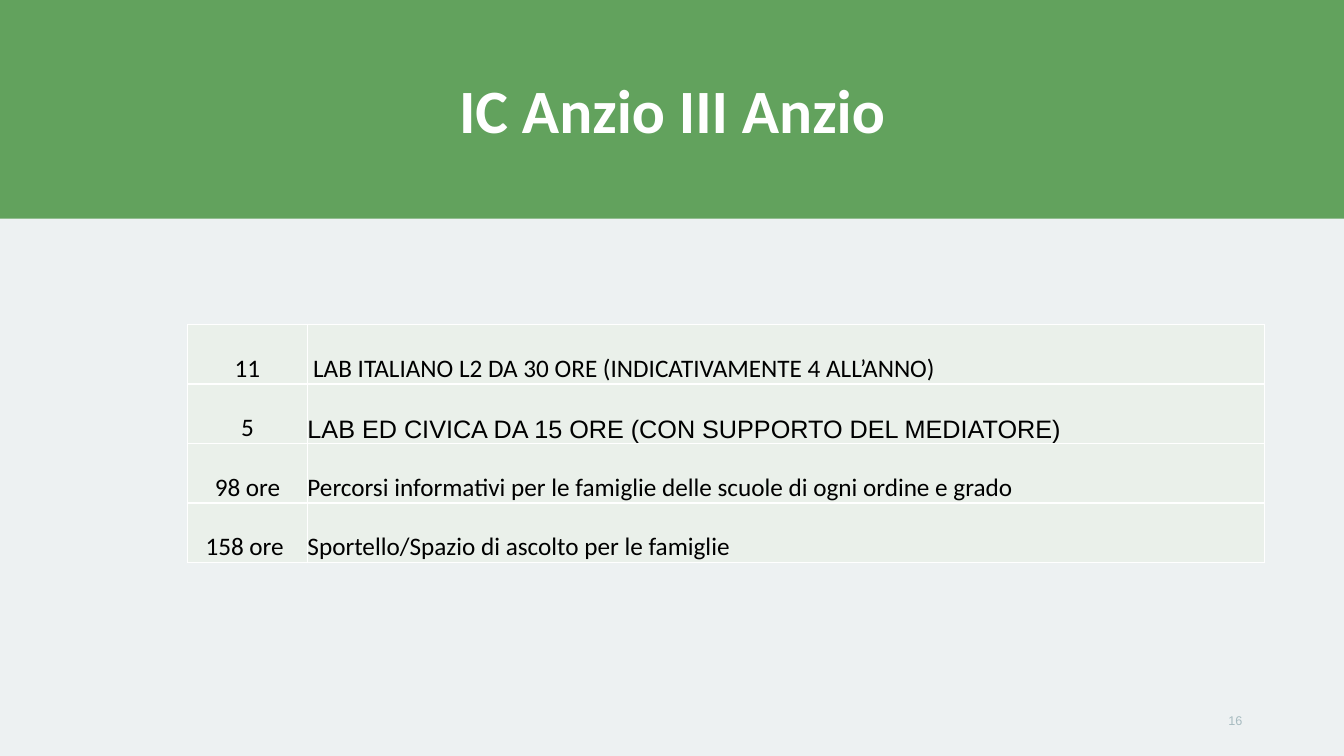
import dataclasses

import pptx
import pptx.dml.color
import pptx.enum.shapes
import pptx.enum.text
import pptx.oxml
import pptx.oxml.ns
import pptx.slide
import pptx.table
import pptx.text.text
import pptx.util

EMU_PER_PX = 9144  # 100 px to the inch
COLORS = {
    "background": "EDF1F2",
    "band": "62A25D",
    "white": "FFFFFF",
    "cell": "EAF0EA",
    "text": "000000",
    "number": "A7BBC0",
}
Align = pptx.enum.text.PP_ALIGN
Anchor = pptx.enum.text.MSO_ANCHOR


@dataclasses.dataclass(frozen=True)
class Style:
    size: int
    color: str
    align: Align
    font: str = "Calibri"
    bold: bool = False
    line_spacing: float = 1.0


@dataclasses.dataclass(frozen=True)
class Activity:
    amount: str
    description: str
    font: str = "Calibri"


TITLE_STYLE = Style(44, "white", Align.CENTER, bold=True, line_spacing=0.9)
NUMBER_STYLE = Style(9, "number", Align.RIGHT, font="Arial")
AMOUNT_STYLE = Style(18, "text", Align.CENTER)
DESCRIPTION_STYLE = Style(18, "text", Align.LEFT)

ACTIVITIES = [
    Activity("11", " LAB ITALIANO L2 DA 30 ORE (INDICATIVAMENTE 4 ALL’ANNO)"),
    Activity("5", "LAB ED CIVICA DA 15 ORE (CON SUPPORTO DEL MEDIATORE)", "Arial"),
    Activity("98 ore", "Percorsi informativi per le famiglie delle scuole di ogni ordine e grado"),
    Activity("158 ore ", "Sportello/Spazio di ascolto per le famiglie"),
]
COLUMN_WIDTHS = (119, 949)
ROW_HEIGHT = 59


def px(length: int) -> pptx.util.Emu:
    return pptx.util.Emu(length * EMU_PER_PX)


def rgb(name: str) -> pptx.dml.color.RGBColor:
    return pptx.dml.color.RGBColor.from_string(COLORS[name])


def write(frame: pptx.text.text.TextFrame, text: str, style: Style) -> None:
    paragraph = frame.paragraphs[0]
    paragraph.alignment = style.align
    paragraph.line_spacing = style.line_spacing
    run = paragraph.add_run()
    run.text = text
    run.font.size = pptx.util.Pt(style.size)
    run.font.name = style.font
    run.font.bold = style.bold
    run.font.color.rgb = rgb(style.color)


def add_band(slide: pptx.slide.Slide, width: int, height: int) -> None:
    band = slide.shapes.add_shape(
        pptx.enum.shapes.MSO_SHAPE.RECTANGLE, 0, 0, px(width), px(height)
    )
    band.shadow.inherit = False
    band.fill.solid()
    band.fill.fore_color.rgb = rgb("band")
    band.line.fill.background()


def add_text(
    slide: pptx.slide.Slide, box: tuple[int, int, int, int], text: str, style: Style
) -> None:
    frame = slide.shapes.add_textbox(*map(px, box)).text_frame
    frame.word_wrap = True
    frame.vertical_anchor = Anchor.MIDDLE
    write(frame, text, style)


def add_borders(cell: pptx.table._Cell) -> None:
    """Put a 1 pt white line on each side, ahead of the fill as the schema asks."""
    properties = cell._tc.get_or_add_tcPr()
    for position, side in enumerate(("lnL", "lnR", "lnT", "lnB")):
        border = pptx.oxml.parse_xml(
            f'<a:{side} {pptx.oxml.ns.nsdecls("a")} w="{pptx.util.Pt(1)}">'
            f'<a:solidFill><a:srgbClr val="{COLORS["white"]}"/></a:solidFill></a:{side}>'
        )
        properties.insert(position, border)


def fill_cell(cell: pptx.table._Cell, text: str, style: Style) -> None:
    cell.margin_left = cell.margin_right = cell.margin_top = cell.margin_bottom = 0
    cell.vertical_anchor = Anchor.BOTTOM
    cell.fill.solid()
    cell.fill.fore_color.rgb = rgb("cell")
    add_borders(cell)
    write(cell.text_frame, text, style)


def add_activities(slide: pptx.slide.Slide, left: int, top: int) -> None:
    table = slide.shapes.add_table(
        len(ACTIVITIES), len(COLUMN_WIDTHS), px(left), px(top),
        px(sum(COLUMN_WIDTHS)), px(ROW_HEIGHT * len(ACTIVITIES)),
    ).table
    table.first_row = table.horz_banding = False
    for column, width in zip(table.columns, COLUMN_WIDTHS):
        column.width = px(width)
    for index, activity in enumerate(ACTIVITIES):
        table.rows[index].height = px(ROW_HEIGHT)
        description_style = dataclasses.replace(DESCRIPTION_STYLE, font=activity.font)
        fill_cell(table.cell(index, 0), activity.amount, AMOUNT_STYLE)
        fill_cell(table.cell(index, 1), activity.description, description_style)


def main() -> None:
    deck = pptx.Presentation()
    deck.slide_width, deck.slide_height = px(1333), px(750)
    slide = deck.slides.add_slide(deck.slide_layouts[6])
    slide.background.fill.solid()
    slide.background.fill.fore_color.rgb = rgb("background")

    add_band(slide, 1333, 217)
    add_text(slide, (92, 40, 1150, 145), "IC Anzio III Anzio", TITLE_STYLE)
    add_text(slide, (942, 695, 300, 40), "16", NUMBER_STYLE)
    add_activities(slide, 186, 322)
    deck.save("out.pptx")


if __name__ == "__main__":
    main()
